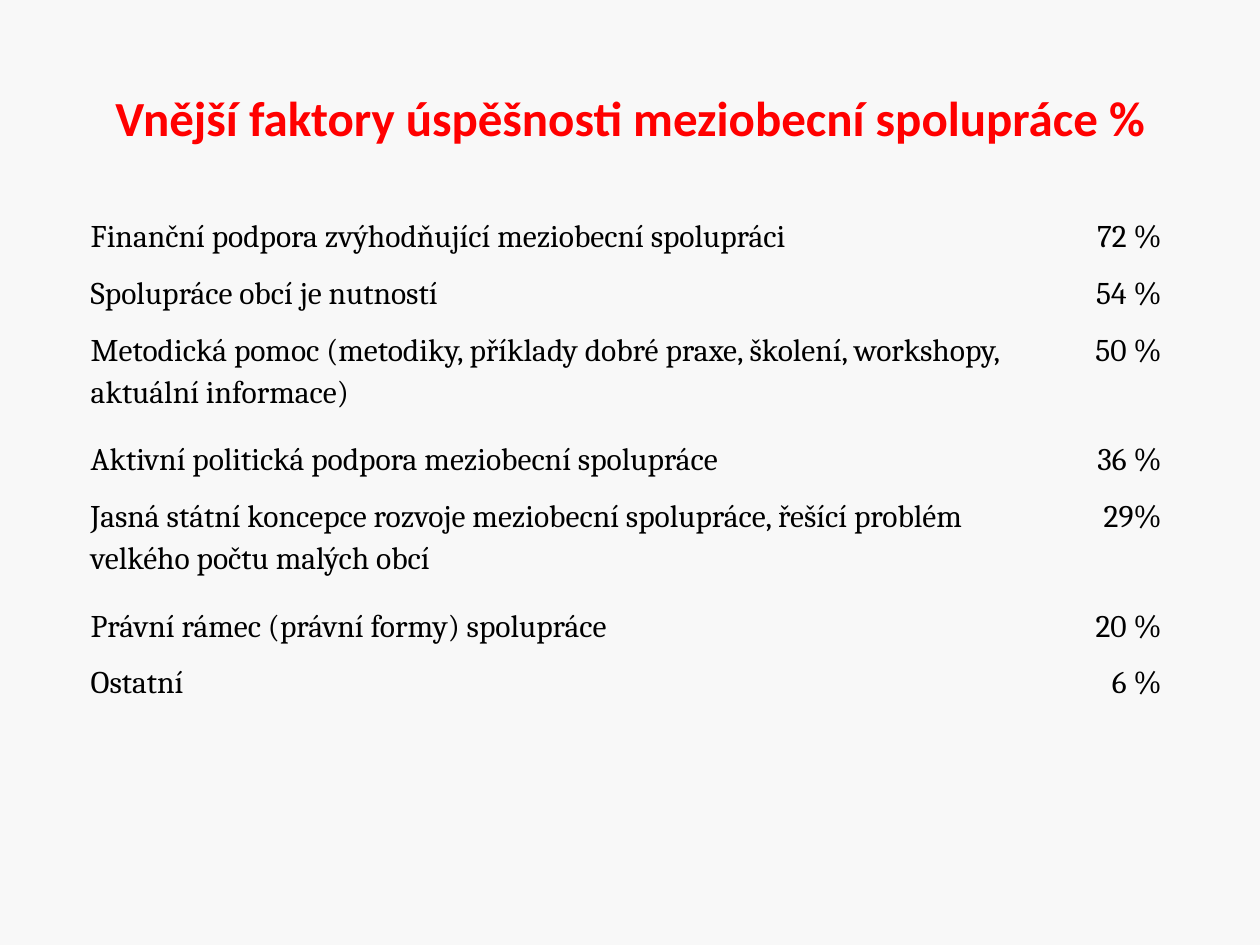
from pptx import Presentation
from pptx.dml.color import RGBColor
from pptx.enum.text import MSO_ANCHOR as Anchor, PP_ALIGN as Align
from pptx.oxml.ns import qn
from pptx.util import Inches, Pt

PLAIN = "{2D5ABB26-0587-4C30-8999-92F81FD0307C}"
COLS = [7.55, 0.12, 0.91]
LOW, HIGH = 0.45, 0.87
ROWS = [
    ("Finanční podpora zvýhodňující meziobecní spolupráci", "72 %", LOW),
    ("Spolupráce obcí je nutností", "54 %", LOW),
    ("Metodická pomoc (metodiky, příklady dobré praxe, školení, workshopy, aktuální informace)", "50 %", HIGH),
    ("Aktivní politická podpora meziobecní spolupráce", "36 %", LOW),
    ("Jasná státní koncepce rozvoje meziobecní spolupráce, řešící problém velkého počtu malých obcí", "29%", HIGH),
    ("Právní rámec (právní formy) spolupráce", "20 %", LOW),
    ("Ostatní", "6 %", LOW),
]


def color(code):
    """Turn a hex string into a colour."""
    return RGBColor.from_string(code)


def style(para, name, size, code, align, bold=False):
    """Format a paragraph and its runs."""
    para.alignment = align
    for run in para.runs:
        font = run.font
        font.name, font.size, font.bold = name, Pt(size), bold
        font.color.rgb = color(code)


def add_title(slide, left, top, width, height):
    """Place and format the title."""
    title = slide.shapes.title
    title.left, title.top = Inches(left), Inches(top)
    title.width, title.height = Inches(width), Inches(height)
    frame = title.text_frame
    frame.text = "Vnější faktory úspěšnosti meziobecní spolupráce %"
    frame.vertical_anchor = Anchor.MIDDLE
    style(frame.paragraphs[0], "Calibri", 28, "FF0000", Align.CENTER, True)


def fill_cell(cell, text, align):
    """Write one table cell without a fill."""
    cell.fill.background()
    cell.margin_left = cell.margin_right = Inches(0.05)
    cell.margin_top = cell.margin_bottom = 0
    cell.vertical_anchor = Anchor.TOP
    if text:
        cell.text_frame.text = text
        para = cell.text_frame.paragraphs[0]
        para.line_spacing = 1.15
        style(para, "Cambria", 18, "000000", align)


def add_factors(slide, left, top, width, height):
    """Add the table of factors and their shares."""
    table = slide.shapes.add_table(
        len(ROWS), len(COLS), Inches(left), Inches(top), Inches(width), Inches(height)
    ).table
    table.first_row = table.horz_banding = False
    table._tbl.tblPr.find(qn("a:tableStyleId")).text = PLAIN
    for col, size in zip(table.columns, COLS):
        col.width = Inches(size)
    for row, (factor, share, size) in zip(table.rows, ROWS):
        row.height = Inches(size)
        for cell, text, align in zip(
            row.cells, (factor, "", share), (Align.LEFT, Align.LEFT, Align.RIGHT)
        ):
            fill_cell(cell, text, align)


def main():
    """Build and save the slide."""
    deck = Presentation()
    deck.slide_width, deck.slide_height = Inches(10), Inches(7.5)
    slide = deck.slides.add_slide(deck.slide_layouts[5])
    back = slide.background.fill
    back.solid()
    back.fore_color.rgb = color("F8F8F8")
    add_title(slide, 0.5, 0.3, 9, 1.25)
    add_factors(slide, 0.67, 1.7, sum(COLS), sum(row[2] for row in ROWS))
    deck.save("out.pptx")


if __name__ == "__main__":
    main()
